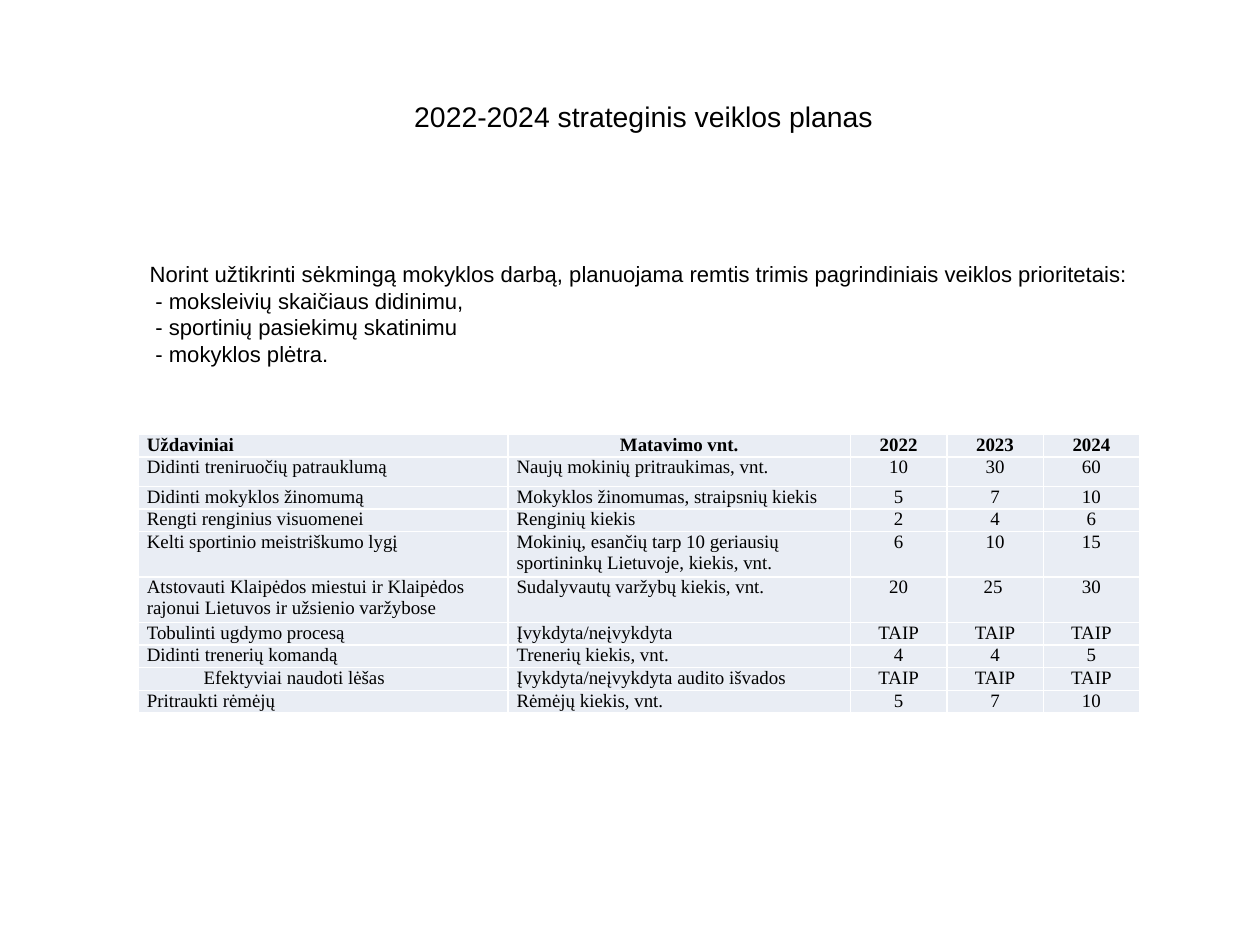
from pptx import Presentation
from pptx.dml.color import RGBColor
from pptx.enum.text import MSO_ANCHOR as Anchor, MSO_AUTO_SIZE as AutoSize, PP_ALIGN as Align
from pptx.oxml import parse_xml
from pptx.oxml.ns import nsdecls
from pptx.util import Inches, Pt

BLACK = RGBColor(0x00, 0x00, 0x00)
WHITE = RGBColor(0xFF, 0xFF, 0xFF)
PALE_BLUE = RGBColor(0xE9, 0xED, 0xF4)

SLIDE_WIDTH, SLIDE_HEIGHT = Pt(800), Pt(600.13)
TITLE_BOX = (0.8, 0.33, 9.75, 1.39)
PRIORITIES_BOX = (1.22, 2.25, 8.83, 1.3)
TABLE_BOX = (1.22, 3.83, 8.83, 2.46)

TITLE = "2022-2024 strateginis veiklos planas"
INTRO = ("Norint užtikrinti sėkmingą mokyklos darbą, planuojama remtis "
         "trimis pagrindiniais veiklos prioritetais:")
PRIORITIES = ["- moksleivių skaičiaus didinimu,", "- sportinių pasiekimų skatinimu",
              "- mokyklos plėtra."]
COLUMN_WIDTHS = [3.26, 3.02, 0.85, 0.85, 0.85]
ROW_HEIGHT = 0.2
TALL_ROWS = {1: 0.26, 4: 0.4, 5: 0.4}
INDENTED_CELLS = {(8, 0): 0.5, (5, 3): 0.25}
PLAN = [
    ("Uždaviniai", "Matavimo vnt.", "2022", "2023", "2024"),
    ("Didinti treniruočių patrauklumą", "Naujų mokinių pritraukimas, vnt.", "10", "30", "60"),
    ("Didinti mokyklos žinomumą", "Mokyklos žinomumas, straipsnių kiekis", "5", "7", "10"),
    ("Rengti renginius visuomenei", "Renginių kiekis", "2", "4", "6"),
    ("Kelti sportinio meistriškumo lygį",
     "Mokinių, esančių tarp 10 geriausių sportininkų Lietuvoje, kiekis, vnt.", "6", "10", "15"),
    ("Atstovauti Klaipėdos miestui ir Klaipėdos rajonui Lietuvos ir užsienio varžybose",
     "Sudalyvautų varžybų kiekis, vnt.", "20", "25", "30"),
    ("Tobulinti ugdymo procesą", "Įvykdyta/neįvykdyta", "TAIP", "TAIP", "TAIP"),
    ("Didinti trenerių komandą", "Trenerių kiekis, vnt.", "4", "4", "5"),
    ("Efektyviai naudoti lėšas", "Įvykdyta/neįvykdyta audito išvados", "TAIP", "TAIP", "TAIP"),
    ("Pritraukti rėmėjų", "Rėmėjų kiekis, vnt.", "5", "7", "10"),
]


def place(shape, box):
    shape.left, shape.top, shape.width, shape.height = map(Inches, box)


def style_runs(paragraph, font_name, size, bold=False):
    for run in paragraph.runs:
        run.font.name = font_name
        run.font.size = Pt(size)
        run.font.bold = bold
        run.font.color.rgb = BLACK


def set_margins(target, side, end):
    target.margin_left = target.margin_right = Pt(side)
    target.margin_top = target.margin_bottom = Pt(end)


def set_left_indent(paragraph, inches):
    properties = paragraph._p.get_or_add_pPr()
    properties.set("marL", str(Inches(inches)))
    properties.set("indent", "0")
    return properties


def add_title(slide, box):
    title = slide.shapes.title
    place(title, box)
    frame = title.text_frame
    frame.text = TITLE
    frame.auto_size = AutoSize.NONE
    frame.vertical_anchor = Anchor.MIDDLE
    set_margins(frame, 0, 0)
    frame.paragraphs[0].alignment = Align.CENTER
    style_runs(frame.paragraphs[0], "Arial", 18)


def add_priorities(slide, box):
    body = slide.placeholders[1]
    place(body, box)
    frame = body.text_frame
    frame.text = "\n".join([INTRO, *PRIORITIES])
    frame.auto_size = AutoSize.NONE
    frame.margin_right = 0
    for index, paragraph in enumerate(frame.paragraphs):
        properties = set_left_indent(paragraph, 0.05 if index else 0)
        properties.append(parse_xml(f"<a:buNone {nsdecls('a')}/>"))
        paragraph.space_before = Pt(0)
        style_runs(paragraph, "Arial", 14)


def set_borders(cell):
    properties = cell._tc.get_or_add_tcPr()
    for position, side in enumerate(("lnL", "lnR", "lnT", "lnB")):
        properties.insert(position, parse_xml(
            f'<a:{side} {nsdecls("a")} w="{Pt(1)}"><a:solidFill>'
            f'<a:srgbClr val="{WHITE}"/></a:solidFill></a:{side}>'))


def fill_cell(cell, text, row, column):
    cell.text = text
    cell.fill.solid()
    cell.fill.fore_color.rgb = PALE_BLUE
    set_margins(cell, 5.4, 0)
    set_borders(cell)
    paragraph = cell.text_frame.paragraphs[0]
    indent = INDENTED_CELLS.get((row, column))
    if indent:
        set_left_indent(paragraph, indent)
    elif column > 1 or (row, column) == (0, 1):
        paragraph.alignment = Align.CENTER
    style_runs(paragraph, "Times New Roman", 12, bold=row == 0)


def add_plan_table(slide, box):
    frame = slide.shapes.add_table(len(PLAN), len(COLUMN_WIDTHS), *map(Inches, box))
    table = frame.table
    table.first_row = table.horz_banding = False
    for column, width in zip(table.columns, COLUMN_WIDTHS):
        column.width = Inches(width)
    for row, values in enumerate(PLAN):
        table.rows[row].height = Inches(TALL_ROWS.get(row, ROW_HEIGHT))
        for column, text in enumerate(values):
            fill_cell(table.cell(row, column), text, row, column)


def main():
    presentation = Presentation()
    presentation.slide_width = SLIDE_WIDTH
    presentation.slide_height = SLIDE_HEIGHT
    slide = presentation.slides.add_slide(presentation.slide_layouts[1])
    # Heading, priorities and plan, from top to bottom
    add_title(slide, TITLE_BOX)
    add_priorities(slide, PRIORITIES_BOX)
    add_plan_table(slide, TABLE_BOX)
    presentation.save("out.pptx")


if __name__ == "__main__":
    main()
